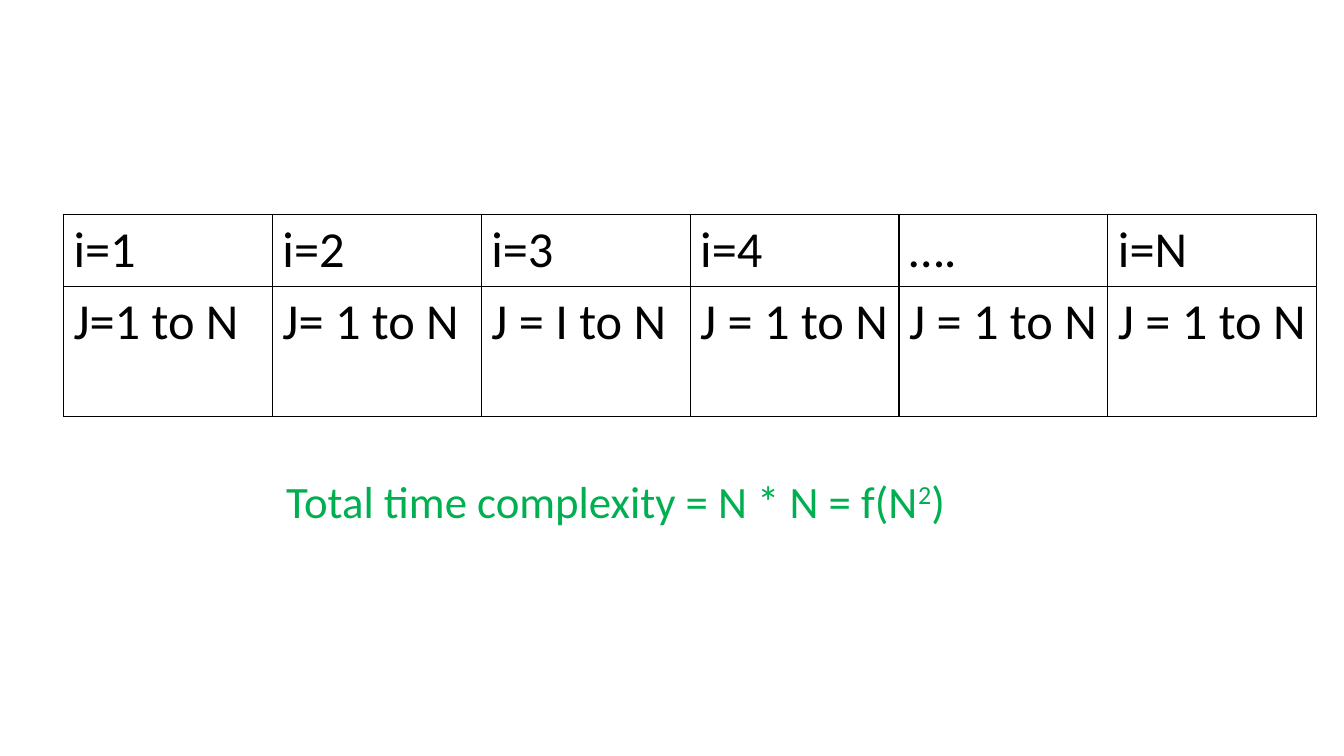
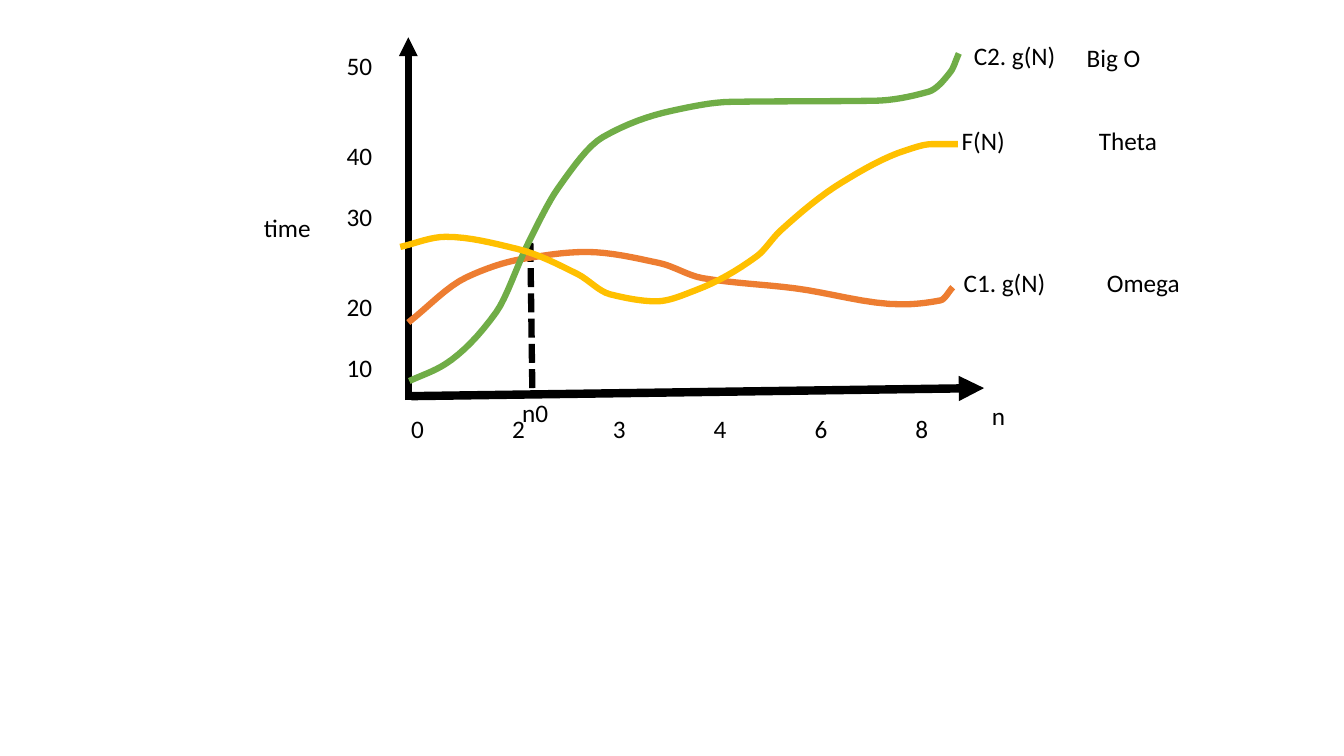
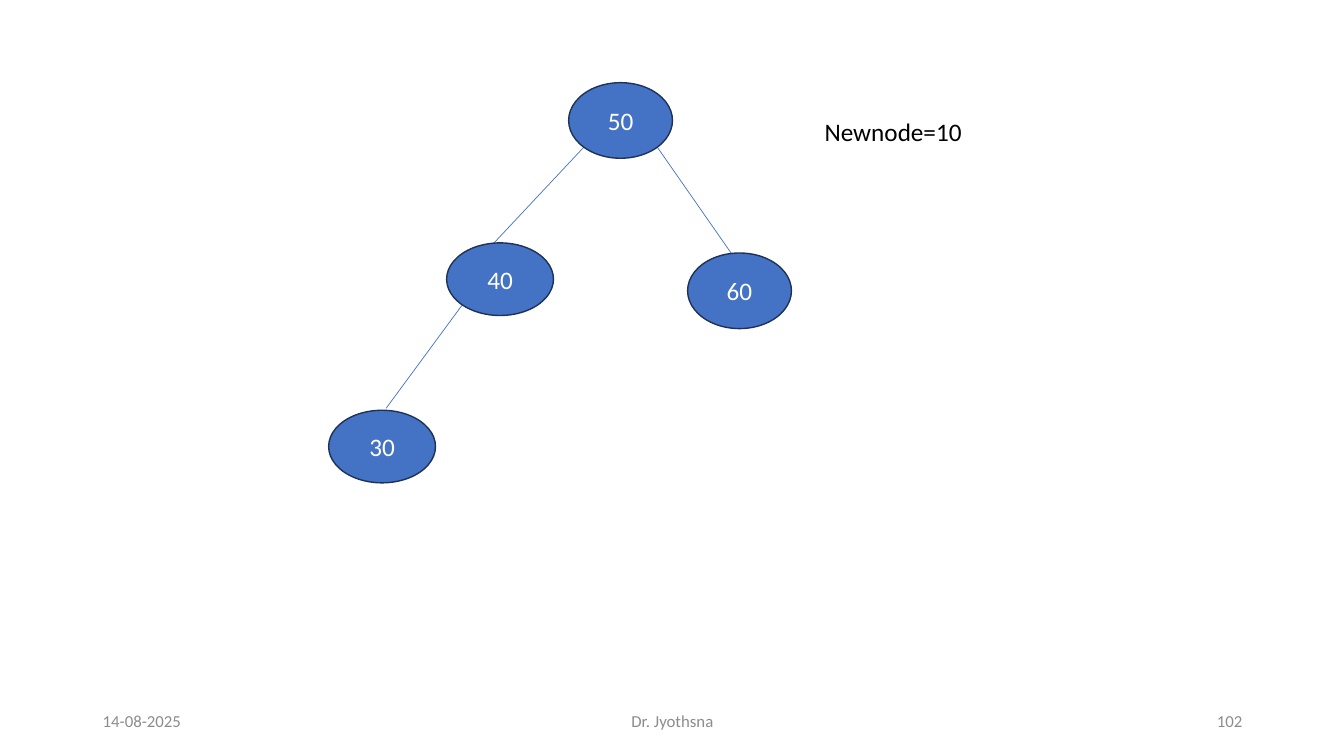
from itertools import pairwise
from math import sqrt

from lxml.etree import SubElement
from pptx import Presentation
from pptx.dml.color import RGBColor
from pptx.enum.dml import MSO_LINE
from pptx.enum.shapes import MSO_CONNECTOR, MSO_SHAPE
from pptx.enum.text import MSO_ANCHOR, PP_ALIGN
from pptx.oxml.ns import qn
from pptx.util import Inches, Pt

BLACK, WHITE, GREY = "000000", "FFFFFF", "8C8C8C"
BLUE, NAVY, LEAF = "4472C4", "1E3256", "00B050"
ORANGE, GREEN, GOLD = "ED7D31", "70AD47", "FFC000"
LEFT, MID, RIGHT = PP_ALIGN.LEFT, PP_ALIGN.CENTER, PP_ALIGN.RIGHT


def rgb(code):
    return RGBColor.from_string(code)


def smooth(knots, steps=8):
    """Join knots by cubics that never swing past a knot's height."""
    rates = [(y2 - y1) / (x2 - x1) for (x1, y1), (x2, y2) in pairwise(knots)]
    slopes = [2 * a * b / (a + b) if a * b > 0 else 0
              for a, b in pairwise(rates)]
    slopes = [rates[0], *slopes, rates[-1]]
    points = [knots[0]]
    for (start, end), (rise, fall) in zip(pairwise(knots), pairwise(slopes)):
        (x1, y1), (x2, y2) = start, end
        span = x2 - x1
        for step in range(1, steps + 1):
            t = step / steps
            u = 1 - t
            y = (u * u * (1 + 2 * t) * y1 + t * t * (3 - 2 * t) * y2
                 + span * t * u * (u * rise - t * fall))
            points.append((x1 + t * span, y))
    return points


class Deck:
    font = "Calibri"
    size = 18
    row = 0.4

    def __init__(self):
        self.prs = Presentation()
        self.prs.slide_width = Inches(13.33)
        self.prs.slide_height = Inches(7.5)

    def page(self):
        self.slide = self.prs.slides.add_slide(self.prs.slide_layouts[6])
        self.shapes = self.slide.shapes

    def style(self, para, size=None, color=BLACK, align=LEFT):
        para.alignment = align
        for run in para.runs:
            run.font.name = self.font
            run.font.size = Pt(size or self.size)
            run.font.color.rgb = rgb(color)

    def text(self, box, words, size=None, color=BLACK, align=LEFT,
             anchor=MSO_ANCHOR.TOP):
        frame = self.shapes.add_textbox(*map(Inches, box)).text_frame
        frame.word_wrap = True
        frame.vertical_anchor = anchor
        frame.text = words
        for para in frame.paragraphs:
            self.style(para, size, color, align)
        return frame

    def label(self, left, top, width, words):
        return self.text((left, top, width, self.row), words)

    def line(self, start, end, color=BLACK, width=0.5, arrow=False, dash=None):
        link = self.shapes.add_connector(
            MSO_CONNECTOR.STRAIGHT, *map(Inches, start + end))
        link.line.color.rgb = rgb(color)
        link.line.width = Pt(width)
        if dash:
            link.line.dash_style = dash
        if arrow:
            SubElement(link.line._get_or_add_ln(), qn("a:tailEnd"),
                       type="triangle")
        SubElement(link._element.spPr, qn("a:effectLst"))

    def curve(self, knots, color, width=4.5):
        spots = [(Inches(x), Inches(y)) for x, y in smooth(knots)]
        pen = self.shapes.build_freeform(*spots[0])
        pen.add_line_segments(spots[1:], close=False)
        shape = pen.convert_to_shape()
        shape.shadow.inherit = False
        shape.fill.background()
        shape.line.color.rgb = rgb(color)
        shape.line.width = Pt(width)

    def node(self, box, words):
        shape = self.shapes.add_shape(MSO_SHAPE.OVAL, *map(Inches, box))
        shape.shadow.inherit = False
        shape.fill.solid()
        shape.fill.fore_color.rgb = rgb(BLUE)
        shape.line.color.rgb = rgb(NAVY)
        shape.line.width = Pt(1)
        frame = shape.text_frame
        frame.text = words
        frame.vertical_anchor = MSO_ANCHOR.MIDDLE
        self.style(frame.paragraphs[0], color=WHITE, align=MID)

    def border(self, cell):
        props = cell._tc.get_or_add_tcPr()
        for spot, side in enumerate(("lnL", "lnR", "lnT", "lnB")):
            edge = SubElement(props, qn("a:" + side), w=str(Pt(1)))
            fill = SubElement(edge, qn("a:solidFill"))
            SubElement(fill, qn("a:srgbClr"), val=BLACK)
            props.insert(spot, edge)

    def table(self, box, rows, heights, size):
        grid = self.shapes.add_table(
            len(rows), len(rows[0]), *map(Inches, box)).table
        grid.first_row = grid.horz_banding = False
        for row, height, words in zip(grid.rows, heights, rows):
            row.height = Inches(height)
            for cell, word in zip(row.cells, words):
                cell.text = word
                cell.fill.background()
                self.border(cell)
                self.style(cell.text_frame.paragraphs[0], size)

    def footer(self, date, name, number):
        parts = ((0.92, 3, date, LEFT), (9.42, 3, number, RIGHT),
                 (4.42, 4.5, name, MID))
        for left, width, words, align in parts:
            self.text((left, 6.95, width, self.row), words, 12, GREY, align,
                      MSO_ANCHOR.MIDDLE)


def loops(deck):
    deck.page()
    outer = [f"i={i}" for i in (1, 2, 3, 4)] + ["….", "i=N"]
    inner = ["J=1 to N", "J= 1 to N", "J = I to N"] + ["J = 1 to N"] * 3
    deck.table((0.63, 2.13, 12.43, 2), (outer, inner), (0.71, 1.29), 36)
    para = deck.text((2.28, 4.65, 7.65, 0.64), "").paragraphs[0]
    for words in ("Total time complexity = N * N = f(N", "2", ")"):
        para.add_run().text = words
    deck.style(para, 32, LEAF, MID)
    power = para.runs[1]
    power._r.get_or_add_rPr().set("baseline", "30000")


def axes(deck):
    deck.line((4.08, 3.93), (9.76, 3.85), width=6, arrow=True)
    deck.line((4.05, 3.97), (4.05, 0.37), width=4.5, arrow=True)

    sizes = ("0", "2", "3", "4", "6", "8")
    ticks = deck.label(3.98, 4.05, 5.68, "\t".join(sizes)).paragraphs[0]
    stops = SubElement(ticks._p.get_or_add_pPr(), qn("a:tabLst"))
    for inch in range(1, len(sizes)):
        SubElement(stops, qn("a:tab"), pos=str(Inches(inch)), algn="l")

    times = deck.text((3.34, 0.45, 0.65, 3.43), "50\n40\n30\n20\n10")
    wide, tight = Pt(43), Pt(21.5)
    for para, gap in zip(times.paragraphs[1:], (wide, tight) * 2):
        para.space_before = gap

    deck.label(9.74, 3.92, 1.18, "n")
    deck.label(2.52, 2.06, 0.93, "time")


def growth(deck):
    deck.page()
    axes(deck)
    deck.line((5.26, 2.41), (5.28, 3.88), width=4.5, dash=MSO_LINE.SQUARE_DOT)
    deck.label(5.08, 3.89, 0.67, "n0")

    lower = ((4.05, 3.2), (4.63, 2.75), (5.18, 2.57), (5.81, 2.5),
             (6.54, 2.61), (6.97, 2.76), (7.88, 2.86), (8.95, 3.02),
             (9.33, 2.98), (9.45, 2.85))
    upper = ((4.06, 3.78), (4.42, 3.61), (4.92, 3.1), (5.24, 2.41),
             (5.54, 1.86), (5.98, 1.36), (6.66, 1.1), (7.26, 1.01),
             (8.67, 1), (9.21, 0.91), (9.43, 0.71), (9.51, 0.53))
    actual = ((3.97, 2.45), (4.42, 2.35), (5.13, 2.47), (5.73, 2.72),
              (6.05, 2.92), (6.51, 2.99), (6.9, 2.88), (7.51, 2.54),
              (7.74, 2.29), (8.35, 1.81), (8.99, 1.49), (9.25, 1.43),
              (9.5, 1.43))
    bounds = (
        (lower, ORANGE, (9.46, 2.6, "C1. g(N)"), (10.88, 2.6, "Omega")),
        (upper, GREEN, (9.56, 0.35, "C2. g(N)"), (10.68, 0.37, "Big O")),
        (actual, GOLD, (9.44, 1.19, "F(N)"), (10.8, 1.19, "Theta")))
    for knots, color, (left, top, rule), (side, level, name) in bounds:
        deck.curve(knots, color)
        deck.label(left, top, 1.36, rule)
        deck.label(side, level, 1.07, name)


def corner(box, side):
    """Point on an oval's lower edge at 45 degrees; side is -1 or 1."""
    left, top, width, height = box
    reach = sqrt(0.5)
    return (left + width / 2 * (1 + side * reach),
            top + height / 2 * (1 + reach))


def crown(box, shift):
    """Top of an oval, moved by shift."""
    left, top, width, _ = box
    return left + width / 2 + shift[0], top + shift[1]


def tree(deck):
    deck.page()
    nodes = {"50": (5.64, 0.82, 1.03, 0.75), "40": (4.43, 2.41, 1.06, 0.72),
             "60": (6.82, 2.51, 1.03, 0.75), "30": (3.26, 4.07, 1.06, 0.72)}
    edges = (("50", -1, "40", (-0.06, 0)), ("50", 1, "60", (0, 0.12)),
             ("40", -1, "30", (0.04, -0.02)))
    for parent, side, child, shift in edges:
        deck.line(corner(nodes[parent], side), crown(nodes[child], shift), BLUE)
    for words, box in nodes.items():
        deck.node(box, words)
    deck.label(8.08, 1.1, 2.88, "Newnode=10")
    deck.footer("14-08-2025", "Dr. Jyothsna", "102")


def main():
    deck = Deck()
    for build in (loops, growth, tree):
        build(deck)
    deck.prs.save("out.pptx")


if __name__ == "__main__":
    main()
